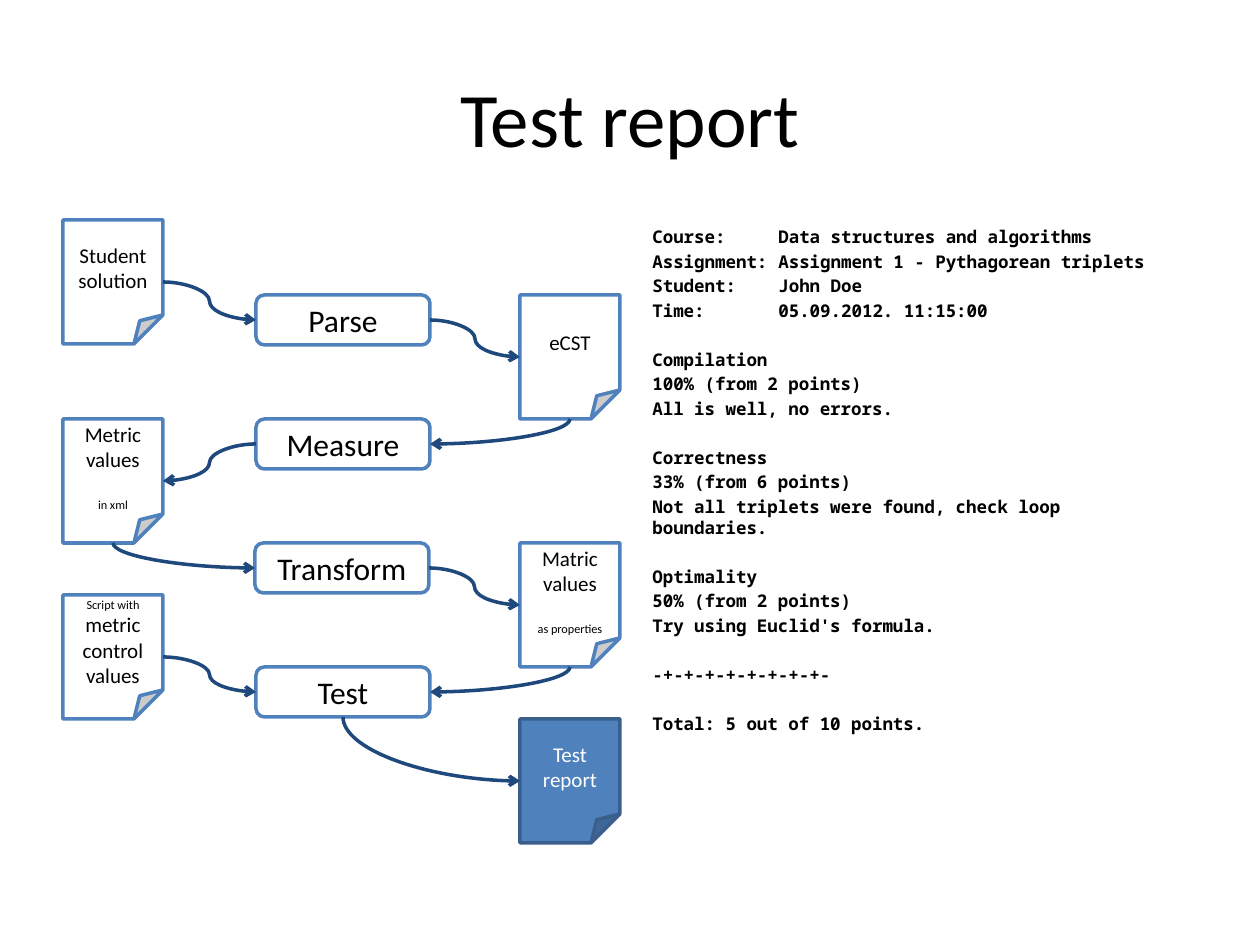
from dataclasses import dataclass
from typing import Any

from lxml import etree
from pptx import Presentation
from pptx import util as u
from pptx.dml.color import RGBColor
from pptx.enum import shapes, text
from pptx.oxml.ns import qn

EMU_PER_PX = 914400 / 126
BLACK = RGBColor(0x00, 0x00, 0x00)
WHITE = RGBColor(0xFF, 0xFF, 0xFF)
BLUE = RGBColor(0x4F, 0x81, 0xBD)
DARK_BLUE = RGBColor(0x3A, 0x5F, 0x8C)
NAVY = RGBColor(0x1F, 0x49, 0x7D)

SHEET = shapes.MSO_SHAPE.FOLDED_CORNER
PROCESS = shapes.MSO_SHAPE.FLOWCHART_ALTERNATE_PROCESS
SIZES = {SHEET: (100, 124), PROCESS: (174, 50)}
LEFT_SHEETS, PROCESSES, RIGHT_SHEETS = 63, 256, 520
TOP, BOTTOM_SITE, LEFT_SITE, RIGHT_SITE = 295, 2, 1, 3
ROW = 124


@dataclass(frozen=True)
class Line:
    words: str
    size: int = 12
    space_before: float = 0
    font: str = "Calibri"
    bold: bool = False
    color: RGBColor = BLACK
    alignment: Any = text.PP_ALIGN.CENTER
    line_spacing: Any = None


@dataclass(frozen=True)
class Node:
    name: str
    kind: Any
    left: int
    top: int
    lines: tuple[Line, ...]
    fill: RGBColor = WHITE
    outline: RGBColor = BLUE


@dataclass(frozen=True)
class Flow:
    source: str
    source_site: int
    target: str
    target_site: int


def process(name: str, row: int, left: int = PROCESSES) -> Node:
    return Node(name, PROCESS, left, TOP + row * ROW, (Line(name, 18),))


NODES = (
    Node("solution", SHEET, LEFT_SHEETS, 220, (Line("Student solution"),)),
    Node("metrics xml", SHEET, LEFT_SHEETS, TOP + ROW,
         (Line("Metric values"), Line("in xml", 7, 14.6))),
    Node("script", SHEET, LEFT_SHEETS, 595,
         (Line("Script with", 7), Line("metric control values"))),
    Node("eCST", SHEET, RIGHT_SHEETS, TOP, (Line("eCST"),)),
    Node("properties", SHEET, RIGHT_SHEETS, TOP + 2 * ROW,
         (Line("Matric values"), Line("as properties", 7, 14.6))),
    Node("report", SHEET, RIGHT_SHEETS, 719,
         (Line("Test", color=WHITE), Line("report", color=WHITE)), BLUE, DARK_BLUE),
    process("Parse", 0),
    process("Measure", 1),
    process("Transform", 2, PROCESSES - 1),
    process("Test", 3),
)

FLOWS = (
    Flow("solution", RIGHT_SITE, "Parse", LEFT_SITE),
    Flow("Parse", RIGHT_SITE, "eCST", LEFT_SITE),
    Flow("eCST", BOTTOM_SITE, "Measure", RIGHT_SITE),
    Flow("Measure", LEFT_SITE, "metrics xml", RIGHT_SITE),
    Flow("metrics xml", BOTTOM_SITE, "Transform", LEFT_SITE),
    Flow("Transform", RIGHT_SITE, "properties", LEFT_SITE),
    Flow("properties", BOTTOM_SITE, "Test", RIGHT_SITE),
    Flow("script", RIGHT_SITE, "Test", LEFT_SITE),
    Flow("Test", BOTTOM_SITE, "report", LEFT_SITE),
)

REPORT = (
    ("Course:\tData structures and algorithms",
     "Assignment:\tAssignment 1 - Pythagorean triplets",
     "Student:\tJohn Doe",
     "Time:\t05.09.2012. 11:15:00"),
    ("Compilation", "100% (from 2 points)", "All is well, no errors."),
    ("Correctness", "33% (from 6 points)",
     "Not all triplets were found, check loop boundaries."),
    ("Optimality", "50% (from 2 points)", "Try using Euclid's formula."),
    ("-+-+-+-+-+-+-+-+-",),
    ("Total: 5 out of 10 points.",),
)


def px(length: int) -> u.Emu:
    return u.Emu(round(length * EMU_PER_PX))


def apply(target: Any, formats: dict[str, Any]) -> None:
    for name, value in formats.items():
        setattr(target, name, value)


def write(frame: Any, lines: tuple[Line, ...], anchor: Any) -> None:
    apply(frame, {"word_wrap": True, "vertical_anchor": anchor})
    for index, line in enumerate(lines):
        paragraph = frame.add_paragraph() if index else frame.paragraphs[0]
        apply(paragraph, {"alignment": line.alignment,
                          "space_before": u.Pt(line.space_before),
                          "line_spacing": line.line_spacing})
        run = paragraph.add_run()
        run.text = line.words
        apply(run.font, {"name": line.font, "size": u.Pt(line.size), "bold": line.bold})
        run.font.color.rgb = line.color
        if "\t" in line.words:
            tabs = etree.SubElement(paragraph._p.get_or_add_pPr(), qn("a:tabLst"))
            etree.SubElement(tabs, qn("a:tab"), pos=str(px(126)), algn="l")


def draw_text(slide: Any, box: tuple[int, ...], lines: tuple[Line, ...], anchor: Any) -> None:
    write(slide.shapes.add_textbox(*map(px, box)).text_frame, lines, anchor)


def fold_corner(shape: Any) -> None:
    geometry = shape._element.spPr.find(qn("a:prstGeom"))
    guides = geometry.find(qn("a:avLst"))
    if guides is None:
        guides = etree.SubElement(geometry, qn("a:avLst"))
    etree.SubElement(guides, qn("a:gd"), name="adj", fmla="val 29000")


def draw_node(slide: Any, node: Node) -> Any:
    box = (node.left, node.top, *SIZES[node.kind])
    shape = slide.shapes.add_shape(node.kind, *map(px, box))
    shape.shadow.inherit = False
    if node.kind == SHEET:
        fold_corner(shape)
    shape.fill.solid()
    shape.fill.fore_color.rgb = node.fill
    shape.line.color.rgb = node.outline
    shape.line.width = u.Pt(2)
    write(shape.text_frame, node.lines, text.MSO_ANCHOR.MIDDLE)
    return shape


def bend_once(connector: Any) -> None:
    run = connector.end_x - connector.begin_x
    width, height = connector.end_y - connector.begin_y, abs(run)
    center_x = (connector.begin_x + connector.end_x) // 2
    center_y = (connector.begin_y + connector.end_y) // 2
    properties = connector._element.spPr
    properties.find(qn("a:prstGeom")).set("prst", "curvedConnector2")
    transform = properties.find(qn("a:xfrm"))
    transform.set("rot", str((270 if run > 0 else 90) * 60000))
    transform.set("flipH", "1" if run > 0 else "0")
    apply(connector, {"left": center_x - width // 2, "top": center_y - height // 2,
                      "width": width, "height": height})


def draw_flow(slide: Any, flow: Flow, nodes: dict[str, Any]) -> None:
    connector = slide.shapes.add_connector(shapes.MSO_CONNECTOR.CURVE, 0, 0, 0, 0)
    connector.begin_connect(nodes[flow.source], flow.source_site)
    connector.end_connect(nodes[flow.target], flow.target_site)
    if flow.source_site == BOTTOM_SITE:
        bend_once(connector)
    connector.line.color.rgb = NAVY
    connector.line.width = u.Pt(2)
    etree.SubElement(connector.line._get_or_add_ln(), qn("a:tailEnd"), type="arrow")
    etree.SubElement(connector._element.spPr, qn("a:effectLst"))


def report_lines() -> tuple[Line, ...]:
    return tuple(
        Line(words, 10, 16 if section and not index else 2, "Noto Sans Mono", True,
             alignment=text.PP_ALIGN.LEFT, line_spacing=u.Pt(12))
        for section, block in enumerate(REPORT)
        for index, words in enumerate(block)
    )


def main() -> None:
    presentation = Presentation()
    apply(presentation, {"slide_width": px(1260), "slide_height": px(945)})
    slide = presentation.slides.add_slide(presentation.slide_layouts[6])
    draw_text(slide, (63, 38, 1134, 157), (Line("Test report", 44),), text.MSO_ANCHOR.MIDDLE)
    draw_text(slide, (640, 220, 557, 624), report_lines(), text.MSO_ANCHOR.TOP)
    nodes = {node.name: draw_node(slide, node) for node in NODES}
    for flow in FLOWS:
        draw_flow(slide, flow, nodes)
    presentation.save("out.pptx")


if __name__ == "__main__":
    main()
